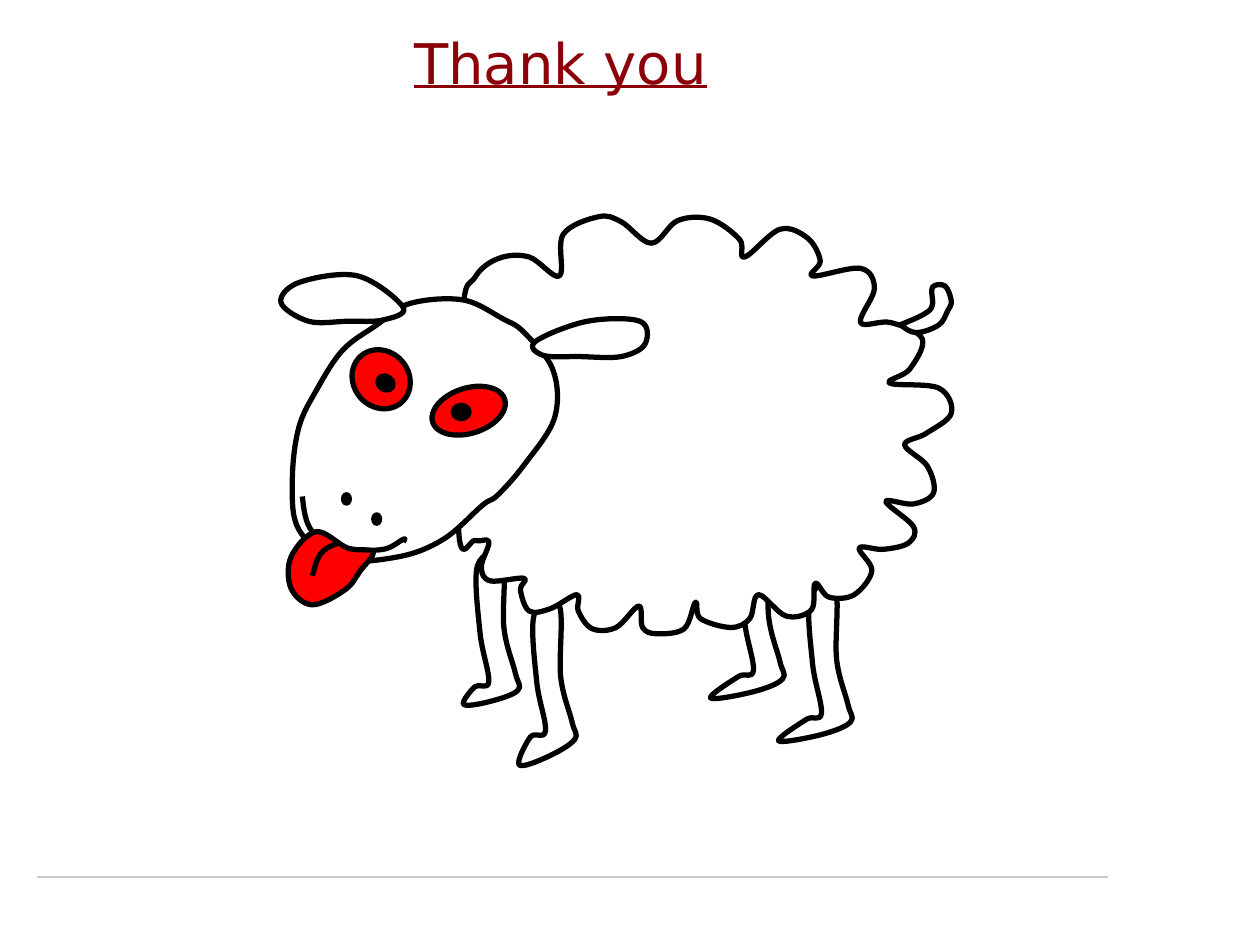
import pptx
import pptx.dml.color
import pptx.enum.shapes
import pptx.enum.text
import pptx.oxml
import pptx.oxml.ns
import pptx.util
from pptx.util import Inches

TITLE = "Thank you"
BLACK, WHITE, RED = "000000", "FFFFFF", "FF0000"

# A leg is measured from the top of its right side; only the foot differs.
LEG_FRONT = [(0, 0), (0.01, 0.56), (0.1, 0.92), (0.12, 1.06)]
LEG_BACK = [(-0.11, 0.99), (-0.18, 0.6), (-0.2, 0.07)]
NEAR_FOOT = [(-0.1, 1.2), (-0.32, 1.26), (-0.23, 1.04)]
FAR_FOOT = [(-0.11, 1.15), (-0.31, 1.17), (-0.22, 1.03)]
HIND_FOOT = [(-0.11, 1.16), (-0.45, 1.21), (-0.23, 1.04)]
LEGS = [
    ((4.44, 4.81), NEAR_FOOT),
    ((3.99, 4.42), FAR_FOOT),
    ((6.63, 4.67), HIND_FOOT),
    ((6.09, 4.33), HIND_FOOT),
]

FLEECE = [
    (3.67, 2.52), (3.77, 2.2), (3.96, 2.05), (4.2, 2.04), (4.44, 2.19), (4.47, 1.86),
    (4.75, 1.72), (4.93, 1.76), (5.17, 1.93), (5.38, 1.75), (5.64, 1.74), (5.87, 1.9),
    (5.91, 2.04), (6.19, 1.82), (6.41, 1.89), (6.51, 2.07), (6.45, 2.19), (6.83, 2.13),
    (6.94, 2.29), (6.83, 2.56), (7.07, 2.56), (7.32, 2.69), (7.22, 2.93), (7.06, 3.04),
    (7.45, 3.08), (7.55, 3.28), (7.35, 3.44), (7.18, 3.53), (7.36, 3.7), (7.41, 3.91),
    (7.25, 4), (7.03, 3.98), (7.25, 4.18), (7.21, 4.31), (7.01, 4.36), (6.82, 4.35),
    (6.92, 4.53), (6.78, 4.72), (6.58, 4.74), (6.47, 4.63), (6.44, 4.84), (6.24, 4.89),
    (6.02, 4.72), (5.95, 4.91), (5.8, 4.98), (5.56, 4.91), (5.52, 4.78), (5.43, 4.99),
    (5.21, 5.03), (5.1, 4.98), (5.07, 4.81), (4.89, 4.98), (4.7, 4.99), (4.59, 4.85),
    (4.58, 4.72), (4.37, 4.83), (4.2, 4.85), (4.13, 4.68), (4.16, 4.59), (3.89, 4.61),
    (3.82, 4.5), (3.88, 4.3), (3.77, 4.29), (3.64, 4.21),
]
TAIL = [
    (7.14, 2.58), (7.34, 2.49), (7.4, 2.42), (7.4, 2.28), (7.5, 2.27), (7.55, 2.39),
    (7.52, 2.47), (7.45, 2.58), (7.27, 2.64), (7.14, 2.57),
]
HEAD = [
    (3.67, 2.38), (3.25, 2.41), (2.99, 2.58), (2.72, 2.78), (2.51, 3.1), (2.37, 3.4),
    (2.32, 3.82), (2.37, 4.2), (2.67, 4.44), (3.16, 4.42), (3.52, 4.28), (3.83, 4.01),
    (3.95, 3.93), (4.16, 3.69), (4.4, 3.32), (4.39, 2.94), (4.16, 2.64), (3.99, 2.53),
]
RIGHT_EAR = [
    (4.25, 2.71), (4.66, 2.55), (5.08, 2.55), (5.12, 2.73), (4.93, 2.83), (4.6, 2.83),
    (4.31, 2.82),
]
LEFT_EAR = [
    (3.2, 2.44), (2.84, 2.19), (2.38, 2.24), (2.23, 2.4), (2.45, 2.55), (2.76, 2.55),
    (3.04, 2.54),
]
SMILE = [(2.4, 3.94), (2.48, 4.22), (2.74, 4.35), (3.04, 4.36), (3.2, 4.28), (3.2, 4.3)]
TONGUE = [
    (2.51, 4.22), (2.31, 4.42), (2.31, 4.67), (2.48, 4.8), (2.74, 4.68), (2.86, 4.53),
    (2.96, 4.38), (2.76, 4.35),
]
TONGUE_CREASE = [(2.69, 4.31), (2.55, 4.39), (2.48, 4.57)]

# (left, top, width, height), rotation, fill, line width
NOSTRILS_AND_EYES = [
    ((2.72, 3.92, 0.06, 0.08), 0, BLACK, 2),
    ((2.96, 4.08, 0.06, 0.08), 0, BLACK, 2),
    ((2.78, 2.79, 0.49, 0.44), 49, RED, 3),
    ((2.99, 2.98, 0.14, 0.12), 31.5, BLACK, 2),
    ((3.42, 3.08, 0.6, 0.36), 342.4, RED, 3),
    ((3.59, 3.21, 0.14, 0.12), 0, BLACK, 2),
]


def color(hex_string):
    return pptx.dml.color.RGBColor.from_string(hex_string)


def style(shape, fill, line_width):
    shape.shadow.inherit = False
    if fill:
        shape.fill.solid()
        shape.fill.fore_color.rgb = color(fill)
    else:
        shape.fill.background()
    shape.line.color.rgb = color(BLACK)
    shape.line.width = pptx.util.Pt(line_width)


def spline_controls(points, closed):
    """Return the two control points of each Catmull-Rom segment."""
    last = len(points) - 1
    before = [points[-2] if closed else None] + points[:-1]
    after = points[1:] + [points[1] if closed else None]

    def offset(i, sign):
        return tuple(p + sign * (b - a) / 6 for p, a, b in zip(points[i], before[i], after[i]))

    def middle(p, q):
        return tuple((a + b) / 2 for a, b in zip(p, q))

    controls = []
    for i in range(last):
        first = offset(i, 1) if closed or i > 0 else None
        second = offset(i + 1, -1) if closed or i + 1 < last else None
        first = first or middle(points[i], second)
        second = second or middle(points[i + 1], first)
        controls.append((first, second))
    return controls


def add_curve(shapes, points, fill=WHITE, closed=True):
    """Draw a smooth outline through the points."""
    corners = [(Inches(x), Inches(y)) for x, y in points + points[:1] * closed]
    builder = shapes.build_freeform(*corners[0])
    builder.add_line_segments(corners[1:], close=closed)
    shape = builder.convert_to_shape()
    qn = pptx.oxml.ns.qn
    outline = shape._element.spPr.find(".//" + qn("a:path"))
    local = [(int(pt.get("x")), int(pt.get("y"))) for pt in outline.iter(qn("a:pt"))]
    segments = outline.findall(qn("a:lnTo"))
    for segment, controls in zip(segments, spline_controls(local, closed)):
        segment.tag = qn("a:cubicBezTo")
        for i, (x, y) in enumerate(controls):
            point = pptx.oxml.parse_xml(
                f'<a:pt {pptx.oxml.ns.nsdecls("a")} x="{round(x)}" y="{round(y)}"/>')
            segment.insert(i, point)
    style(shape, fill, 3)


def add_title(slide):
    box = slide.shapes.add_textbox(Inches(0.2), Inches(-0.01), Inches(8.5), Inches(1))
    frame = box.text_frame
    frame.word_wrap = True
    frame.vertical_anchor = pptx.enum.text.MSO_ANCHOR.MIDDLE
    frame.text = TITLE
    paragraph = frame.paragraphs[0]
    paragraph.alignment = pptx.enum.text.PP_ALIGN.CENTER
    font = paragraph.runs[0].font
    font.name = "DejaVu Sans"
    font.size = pptx.util.Pt(32)
    font.underline = True
    font.color.rgb = color("8C0009")


def add_footer_line(slide):
    line = slide.shapes.add_connector(
        pptx.enum.shapes.MSO_CONNECTOR.STRAIGHT,
        Inches(0.29), Inches(6.96), Inches(8.79), Inches(6.96))
    line.line.color.rgb = color("CBCBCB")
    line.line.width = pptx.util.Pt(1)
    line._element.spPr.append(
        pptx.oxml.parse_xml(f'<a:effectLst {pptx.oxml.ns.nsdecls("a")}/>'))


def add_sheep(slide):
    shapes = slide.shapes
    for (left, top), foot in LEGS:
        leg = LEG_FRONT + foot + LEG_BACK
        add_curve(shapes, [(left + x, top + y) for x, y in leg])
    add_curve(shapes, FLEECE)
    add_curve(shapes, TAIL, closed=False)
    for part in (HEAD, RIGHT_EAR, LEFT_EAR):
        add_curve(shapes, part)
    for box, rotation, fill, line_width in NOSTRILS_AND_EYES:
        oval = shapes.add_shape(pptx.enum.shapes.MSO_SHAPE.OVAL, *map(Inches, box))
        oval.rotation = rotation
        style(oval, fill, line_width)
    mouth = shapes.add_group_shape().shapes
    add_curve(mouth, SMILE, fill=None, closed=False)
    add_curve(mouth, TONGUE, fill=RED)
    add_curve(mouth, TONGUE_CREASE, fill=None, closed=False)


def main():
    presentation = pptx.Presentation()
    presentation.slide_width = Inches(10)
    presentation.slide_height = Inches(7.5)
    slide = presentation.slides.add_slide(presentation.slide_layouts[6])
    add_footer_line(slide)
    add_title(slide)
    add_sheep(slide)
    presentation.save("out.pptx")


if __name__ == "__main__":
    main()
